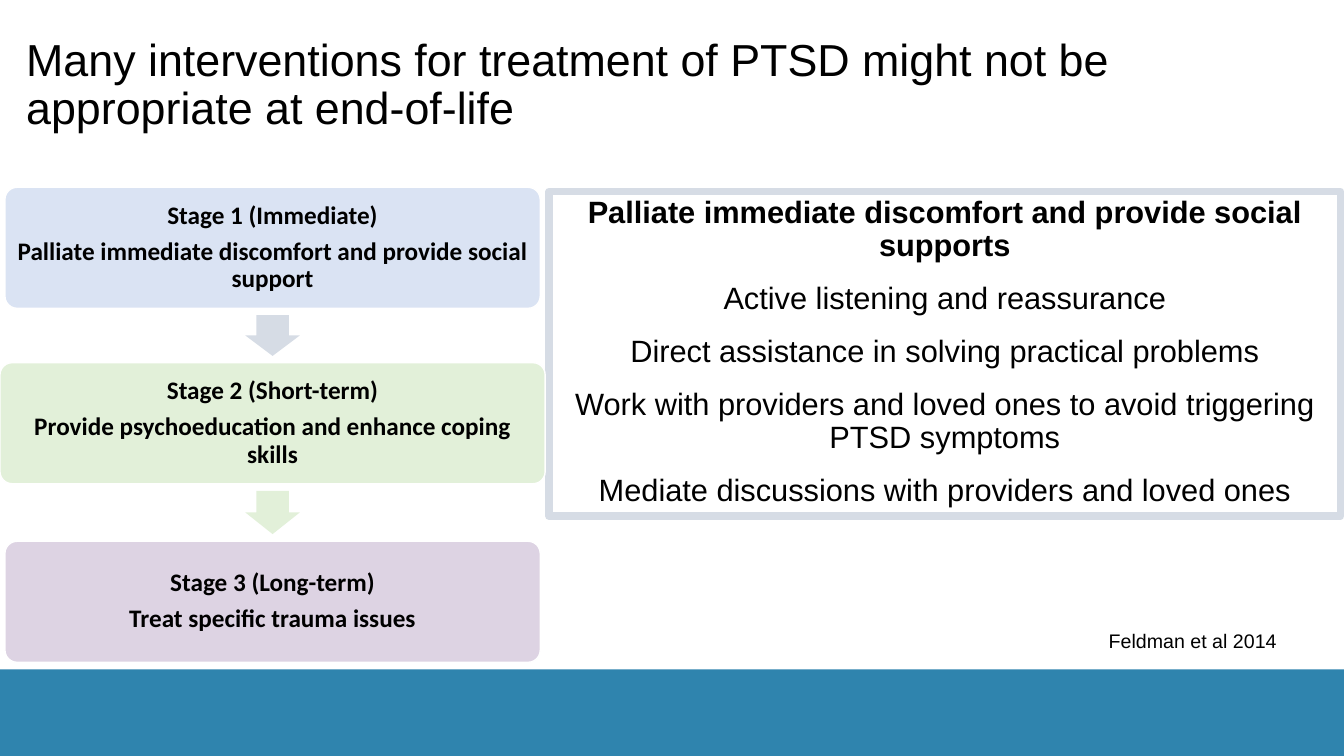
from dataclasses import dataclass
from itertools import pairwise

from pptx import Presentation
from pptx.dml.color import RGBColor
from pptx.enum.shapes import MSO_SHAPE as Preset
from pptx.enum.text import MSO_ANCHOR as Anchor, PP_ALIGN as Align
from pptx.shapes.autoshape import Shape
from pptx.slide import Slide
from pptx.util import Cm, Pt


@dataclass(frozen=True)
class Theme:
    text: str = "000000"
    white: str = "FFFFFF"
    band: str = "2F84AE"
    grey: str = "D6DCE5"
    blue: str = "DAE3F3"
    green: str = "E2F0D9"
    purple: str = "DDD3E3"
    body_font: str = "Arial"
    stage_font: str = "Calibri"
    title_size: int = 32
    panel_size: int = 22
    stage_size: int = 18
    citation_size: int = 14


@dataclass(frozen=True)
class Box:
    left: float
    top: float
    width: float
    height: float

    @property
    def bottom(self) -> float:
        return self.top + self.height

    def lengths(self) -> tuple[Cm, Cm, Cm, Cm]:
        return Cm(self.left), Cm(self.top), Cm(self.width), Cm(self.height)


@dataclass(frozen=True)
class Stage:
    name: str
    goal: str
    top: float
    width: float
    fill: str
    arrow_fill: str


@dataclass(frozen=True)
class TextStyle:
    font: str
    size: int
    align: Align = Align.LEFT
    anchor: Anchor = Anchor.TOP
    inset: float = 0.25
    line_spacing: float = 0.9
    before: float = 0
    after: float = 0
    bold_count: int = 0  # leading paragraphs set in bold


THEME = Theme()
SLIDE_WIDTH, SLIDE_HEIGHT = 33.87, 19.05
STAGE_CENTER, STAGE_HEIGHT = 6.87, 3.05
ARROW_WIDTH, ARROW_SHARE = 1.37, 0.75

STAGES = [
    Stage("Stage 1 (Immediate)", "Palliate immediate discomfort and provide social support",
          4.72, 13.49, THEME.blue, THEME.grey),
    Stage("Stage 2 (Short-term)", "Provide psychoeducation and enhance coping skills",
          9.14, 13.74, THEME.green, THEME.green),
    Stage("Stage 3 (Long-term)", "Treat specific trauma issues",
          13.64, 13.49, THEME.purple, THEME.purple),
]
INTERVENTIONS = [
    "Palliate immediate discomfort and provide social supports",
    "Active listening and reassurance",
    "Direct assistance in solving practical problems",
    "Work with providers and loved ones to avoid triggering PTSD symptoms",
    "Mediate discussions with providers and loved ones",
]

TITLE_STYLE = TextStyle(THEME.body_font, THEME.title_size, anchor=Anchor.MIDDLE)
CITATION_STYLE = TextStyle(THEME.body_font, THEME.citation_size, line_spacing=1.0)
PANEL_STYLE = TextStyle(THEME.body_font, THEME.panel_size, Align.CENTER, inset=0.13,
                        before=12, after=2, bold_count=1)
STAGE_STYLE = TextStyle(THEME.stage_font, THEME.stage_size, Align.CENTER, Anchor.MIDDLE,
                        inset=0.18, after=6.3, bold_count=2)


def write(shape: Shape, lines: list[str], style: TextStyle) -> None:
    frame = shape.text_frame
    inset = Cm(style.inset)
    frame_format = {"word_wrap": True, "vertical_anchor": style.anchor,
                    "margin_left": inset, "margin_right": inset,
                    "margin_top": Cm(0.13) if style.inset > 0.2 else inset,
                    "margin_bottom": Cm(0.13) if style.inset > 0.2 else inset}
    for name, value in frame_format.items():
        setattr(frame, name, value)
    for index, line in enumerate(lines):
        paragraph = frame.paragraphs[0] if index == 0 else frame.add_paragraph()
        paragraph.text = line
        paragraph_format = {"alignment": style.align, "line_spacing": style.line_spacing,
                            "space_before": Pt(style.before if index else 0),
                            "space_after": Pt(style.after)}
        font_format = {"name": style.font, "size": Pt(style.size),
                       "bold": index < style.bold_count}
        for target, values in ((paragraph, paragraph_format), (paragraph.font, font_format)):
            for name, value in values.items():
                setattr(target, name, value)
        paragraph.font.color.rgb = RGBColor.from_string(THEME.text)


def add_text(slide: Slide, box: Box, line: str, style: TextStyle) -> None:
    write(slide.shapes.add_textbox(*box.lengths()), [line], style)


def add_preset(slide: Slide, preset: Preset, box: Box, fill: str | None = None,
               line: str | None = None, line_width: float = 1,
               adjustments: tuple[float, ...] = ()) -> Shape:
    shape = slide.shapes.add_shape(preset, *box.lengths())
    shape.shadow.inherit = False
    for index, value in enumerate(adjustments):
        shape.adjustments[index] = value
    if fill:
        shape.fill.solid()
        shape.fill.fore_color.rgb = RGBColor.from_string(fill)
    else:
        shape.fill.background()
    if line:
        shape.line.color.rgb = RGBColor.from_string(line)
        shape.line.width = Pt(line_width)
    else:
        shape.line.fill.background()
    return shape


def stage_box(stage: Stage) -> Box:
    return Box(STAGE_CENTER - stage.width / 2, stage.top, stage.width, STAGE_HEIGHT)


def add_stage(slide: Slide, stage: Stage) -> None:
    shape = add_preset(slide, Preset.ROUNDED_RECTANGLE, stage_box(stage), stage.fill,
                       THEME.white, adjustments=(0.1,))
    write(shape, [stage.name, stage.goal], STAGE_STYLE)


def add_stage_arrow(slide: Slide, upper: Stage, lower: Stage) -> None:
    start = stage_box(upper).bottom
    gap = lower.top - start
    height = gap * ARROW_SHARE
    box = Box(STAGE_CENTER - ARROW_WIDTH / 2, start + (gap - height) / 2, ARROW_WIDTH, height)
    add_preset(slide, Preset.DOWN_ARROW, box, upper.arrow_fill, adjustments=(0.6, 0.5))


def main() -> None:
    presentation = Presentation()
    presentation.slide_width, presentation.slide_height = Cm(SLIDE_WIDTH), Cm(SLIDE_HEIGHT)
    slide = presentation.slides.add_slide(presentation.slide_layouts[6])

    # Footer band, title and citation
    add_preset(slide, Preset.RECTANGLE, Box(0, 16.87, SLIDE_WIDTH, 2.18), THEME.band)
    add_text(slide, Box(0.41, 0.33, 29.21, 3.68),
             "Many interventions for treatment of PTSD might not be appropriate at end-of-life",
             TITLE_STYLE)
    add_text(slide, Box(27.69, 15.72, 6.18, 0.86), "Feldman et al 2014", CITATION_STYLE)

    # Interventions for the first stage
    panel = add_preset(slide, Preset.RECTANGLE, Box(13.84, 4.83, 19.94, 8.18),
                       line=THEME.grey, line_width=5.5)
    write(panel, INTERVENTIONS, PANEL_STYLE)

    # Stages, top to bottom, with arrows between them
    for stage in STAGES:
        add_stage(slide, stage)
    for upper, lower in pairwise(STAGES):
        add_stage_arrow(slide, upper, lower)

    presentation.save("out.pptx")


if __name__ == "__main__":
    main()
